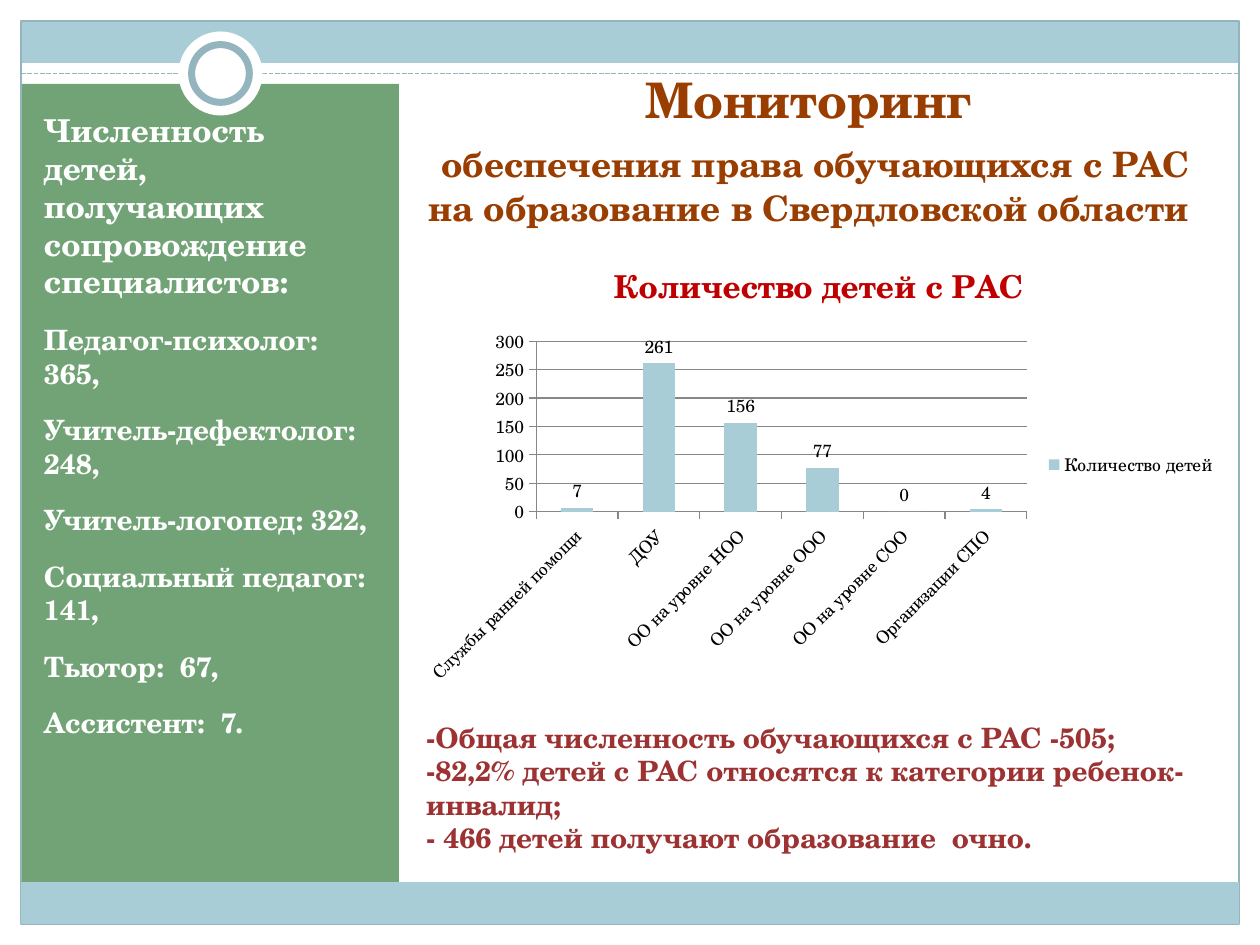
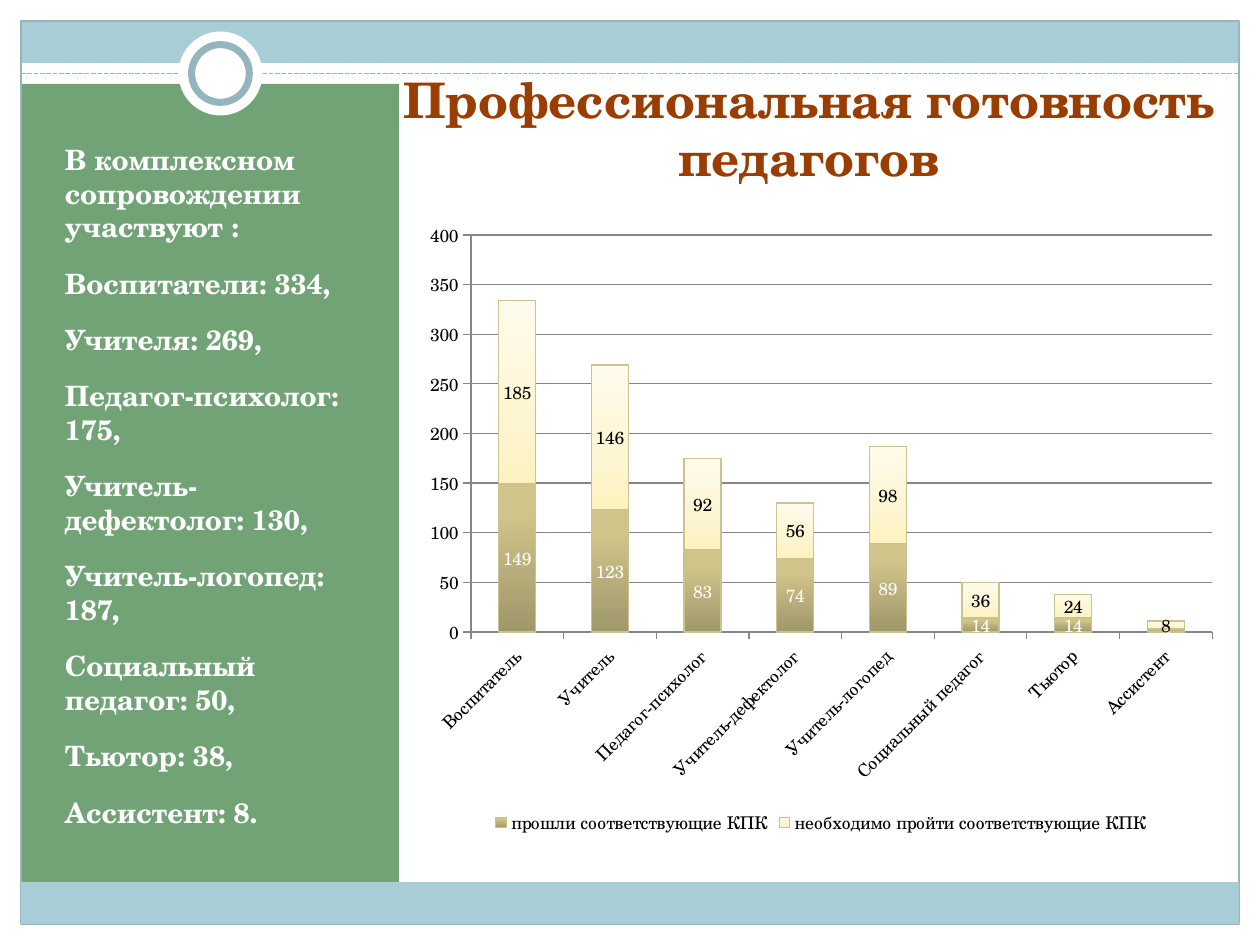
from lxml.etree import SubElement
from pptx import Presentation
from pptx.chart.data import CategoryChartData
from pptx.dml.color import RGBColor
from pptx.enum.chart import XL_CHART_TYPE, XL_LABEL_POSITION, XL_LEGEND_POSITION, XL_TICK_MARK
from pptx.enum.dml import MSO_LINE
from pptx.enum.shapes import MSO_CONNECTOR, MSO_SHAPE
from pptx.enum.text import MSO_ANCHOR, PP_ALIGN
from pptx.oxml.ns import qn
from pptx.util import Inches, Pt

COLORS = {
    "white": "FFFFFF", "black": "000000", "band": "A8CDD7", "sidebar": "72A376",
    "frame": "94B5BE", "title": "9A3D01", "notes": "9D3232", "chart_title": "C00000",
    "grid": "878787", "bar_edge": "CBC292",
}
TRAINED = [(0, "A0976B"), (80, "D0C48A"), (100, "D2C68A")]
UNTRAINED = [(0, "FDF2BF"), (35, "FDF5D1"), (100, "FFFBEC")]
FONT = "TeX Gyre Schola"
COLUMNS, ROWS = 120, 90  # grid cells of one twelfth of an inch


def rgb(name):
    return RGBColor.from_string(COLORS[name])


class SlideBuilder:
    def __init__(self):
        self.deck = Presentation()
        self.deck.slide_width, self.deck.slide_height = Inches(10), Inches(7.5)
        self.page = None

    def place(self, *cells):
        """Turn column, row, column, row... into slide lengths."""
        steps = (self.deck.slide_width / COLUMNS, self.deck.slide_height / ROWS)
        return [round(cell * steps[index % 2]) for index, cell in enumerate(cells)]

    def shape(self, kind, cells, fill=None, line=None, width=0.75):
        shape = self.page.shapes.add_shape(kind, *self.place(*cells))
        shape.shadow.inherit = False
        if fill:
            shape.fill.solid()
            shape.fill.fore_color.rgb = rgb(fill)
        else:
            shape.fill.background()
        if line:
            shape.line.color.rgb = rgb(line)
            shape.line.width = Pt(width)
        else:
            shape.line.fill.background()

    def rect(self, *cells, **style):
        self.shape(MSO_SHAPE.RECTANGLE, cells, **style)

    def circle(self, column, row, radius, **style):
        cells = (column - radius, row - radius, 2 * radius, 2 * radius)
        self.shape(MSO_SHAPE.OVAL, cells, **style)

    def dashed_line(self, *cells):
        line = self.page.shapes.add_connector(MSO_CONNECTOR.STRAIGHT, *self.place(*cells))
        line.line.color.rgb = rgb("frame")
        line.line.width = Pt(0.9)
        line.line.dash_style = MSO_LINE.SQUARE_DOT
        SubElement(line._element.spPr, qn("a:effectLst"))

    def new_page(self):
        """Add a slide with the shared frame, bands, sidebar and ring."""
        self.page = self.deck.slides.add_slide(self.deck.slide_layouts[6])
        self.dashed_line(2, 7, 118, 7)
        # White margins
        for cells in ((118, 0, 2, 90), (0, 0, 120, 2), (0, 0, 2, 90)):
            self.rect(*cells, fill="white")
        # Top band, sidebar and frame
        self.rect(2, 2, 116, 4, fill="band")
        self.rect(2, 8, 36, 77, fill="sidebar")
        self.rect(2, 2, 116, 86, line="frame")
        # Ring
        self.circle(21, 7, 4, fill="white")
        self.circle(21, 7, 2.75, fill="white", line="frame", width=4)
        # Bottom band
        self.rect(2, 84, 116, 4, fill="band")

    def text(self, cells, paragraphs, color, align=PP_ALIGN.LEFT, before=0, after=0):
        """Write paragraphs, each a list of (words, size) spans."""
        box = self.page.shapes.add_textbox(*self.place(*cells))
        frame = box.text_frame
        frame.word_wrap = True
        frame.vertical_anchor = MSO_ANCHOR.TOP
        for index, spans in enumerate(paragraphs):
            para = frame.add_paragraph() if index else frame.paragraphs[0]
            para.alignment = align
            para.space_before, para.space_after = Pt(before), Pt(after)
            for words, size in spans:
                span = para.add_run()
                span.text = words
                self.style(span.font, size, color, bold=True)

    def style(self, font, size, color="black", bold=False):
        font.name, font.size, font.bold = FONT, Pt(size), bold
        font.color.rgb = rgb(color)

    def title(self, rows, paragraphs):
        self.text((37, 6, 80, rows), paragraphs, "title", PP_ALIGN.CENTER)

    def sidebar(self, cells, lines, heading_size=16):
        sizes = [heading_size] + [16] * (len(lines) - 1)
        paragraphs = [[span] for span in zip(lines, sizes)]
        self.text(cells, paragraphs, "white", before=3, after=10)

    def column_chart(self, kind, cells, categories, values, legend, top, title=None):
        data = CategoryChartData()
        data.categories = categories
        for name, numbers in values.items():
            data.add_series(name, numbers)
        chart = self.page.shapes.add_chart(kind, *self.place(*cells), data).chart
        self.style(chart.font, 10)
        chart.has_title = title is not None
        if title:
            chart.chart_title.text_frame.text = title
            span = chart.chart_title.text_frame.paragraphs[0].runs[0]
            self.style(span.font, 18, "chart_title", bold=True)
        chart.has_legend = True
        chart.legend.position = legend
        chart.legend.include_in_layout = False
        self.style(chart.legend.font, 10)
        # Axes
        for axis in (chart.category_axis, chart.value_axis):
            axis.major_tick_mark = XL_TICK_MARK.OUTSIDE
            axis.minor_tick_mark = XL_TICK_MARK.NONE
            axis.format.line.color.rgb = rgb("grid")
            self.style(axis.tick_labels.font, 10)
        chart.category_axis._element.find(qn("c:txPr")).find(qn("a:bodyPr")).set("rot", "-2700000")
        scale = chart.value_axis
        scale.minimum_scale, scale.maximum_scale, scale.major_unit = 0, top, 50
        scale.major_gridlines.format.line.color.rgb = rgb("grid")
        # Bars
        plot = chart.plots[0]
        plot.gap_width, plot.vary_by_categories = 150, False
        return plot

    def value_labels(self, series, position, color="black"):
        labels = series.data_labels
        labels.show_value = True
        labels.position = position
        self.style(labels.font, 10, color)

    def gradient(self, series, stops):
        fill = series.format.fill
        fill.gradient()
        fill.gradient_angle = 90
        stop_list = series._element.spPr.find(qn("a:gradFill")).find(qn("a:gsLst"))
        for stop in list(stop_list):
            stop_list.remove(stop)
        for percent, color in stops:
            stop = SubElement(stop_list, qn("a:gs"), pos=str(percent * 1000))
            SubElement(stop, qn("a:srgbClr"), val=color)
        series.format.line.color.rgb = rgb("bar_edge")
        series.format.line.width = Pt(0.75)


def monitoring_slide(builder):
    builder.new_page()
    builder.text((39.4, 68, 77, 14), [[(line, 16)] for line in (
        "-Общая численность обучающихся с РАС -505;",
        "-82,2% детей с РАС относятся к категории ребенок-инвалид;",
        "- 466 детей получают образование  очно.",
    )], "notes")
    builder.sidebar((3, 10, 34, 75), [
        "Численность детей, получающих сопровождение специалистов:",
        "Педагог-психолог: 365,",
        "Учитель-дефектолог: 248,",
        "Учитель-логопед: 322,",
        "Социальный педагог: 141,",
        "Тьютор:  67,",
        "Ассистент:  7.",
    ], heading_size=18)
    builder.title(16.5, [
        [("Мониторинг", 28)],
        [(" ", 28), ("обеспечения права обучающихся с РАС на образование в Свердловской области", 20)],
    ])
    plot = builder.column_chart(
        XL_CHART_TYPE.COLUMN_CLUSTERED, (39, 22.5, 78, 43.5),
        ["Службы ранней помощи", "ДОУ", "ОО на уровне НОО", "ОО на уровне ООО",
         "ОО на уровне СОО", "Организации СПО"],
        {"Количество детей": (7, 261, 156, 77, 0, 4)},
        XL_LEGEND_POSITION.RIGHT, 300, "Количество детей с РАС")
    children = plot.series[0]
    children.format.fill.solid()
    children.format.fill.fore_color.rgb = rgb("band")
    builder.value_labels(children, XL_LABEL_POSITION.OUTSIDE_END)


def readiness_slide(builder):
    builder.new_page()
    builder.title(12.5, [[("Профессиональная готовность педагогов", 28)]])
    plot = builder.column_chart(
        XL_CHART_TYPE.COLUMN_STACKED, (39.4, 20, 77.6, 60),
        ["Воспитатель", "Учитель", "Педагог-психолог", "Учитель-дефектолог",
         "Учитель-логопед", "Социальный педагог", "Тьютор", "Ассистент"],
        {"прошли соответствующие КПК": (149, 123, 83, 74, 89, 14, 14, 3),
         "необходимо пройти соответствующие КПК": (185, 146, 92, 56, 98, 36, 24, 8)},
        XL_LEGEND_POSITION.BOTTOM, 400)
    plot.overlap = 100
    looks = ((TRAINED, "white"), (UNTRAINED, "black"))
    for series, (stops, label_color) in zip(plot.series, looks):
        builder.gradient(series, stops)
        builder.value_labels(series, XL_LABEL_POSITION.CENTER, label_color)
    builder.sidebar((5, 13, 32, 69), [
        "В комплексном сопровождении участвуют :",
        "Воспитатели: 334,",
        "Учителя: 269,",
        "Педагог-психолог: 175,",
        "Учитель-дефектолог: 130,",
        "Учитель-логопед: 187,",
        "Социальный педагог: 50,",
        "Тьютор: 38,",
        "Ассистент: 8.",
    ])


def main():
    builder = SlideBuilder()
    monitoring_slide(builder)
    readiness_slide(builder)
    builder.deck.save("out.pptx")


if __name__ == "__main__":
    main()
